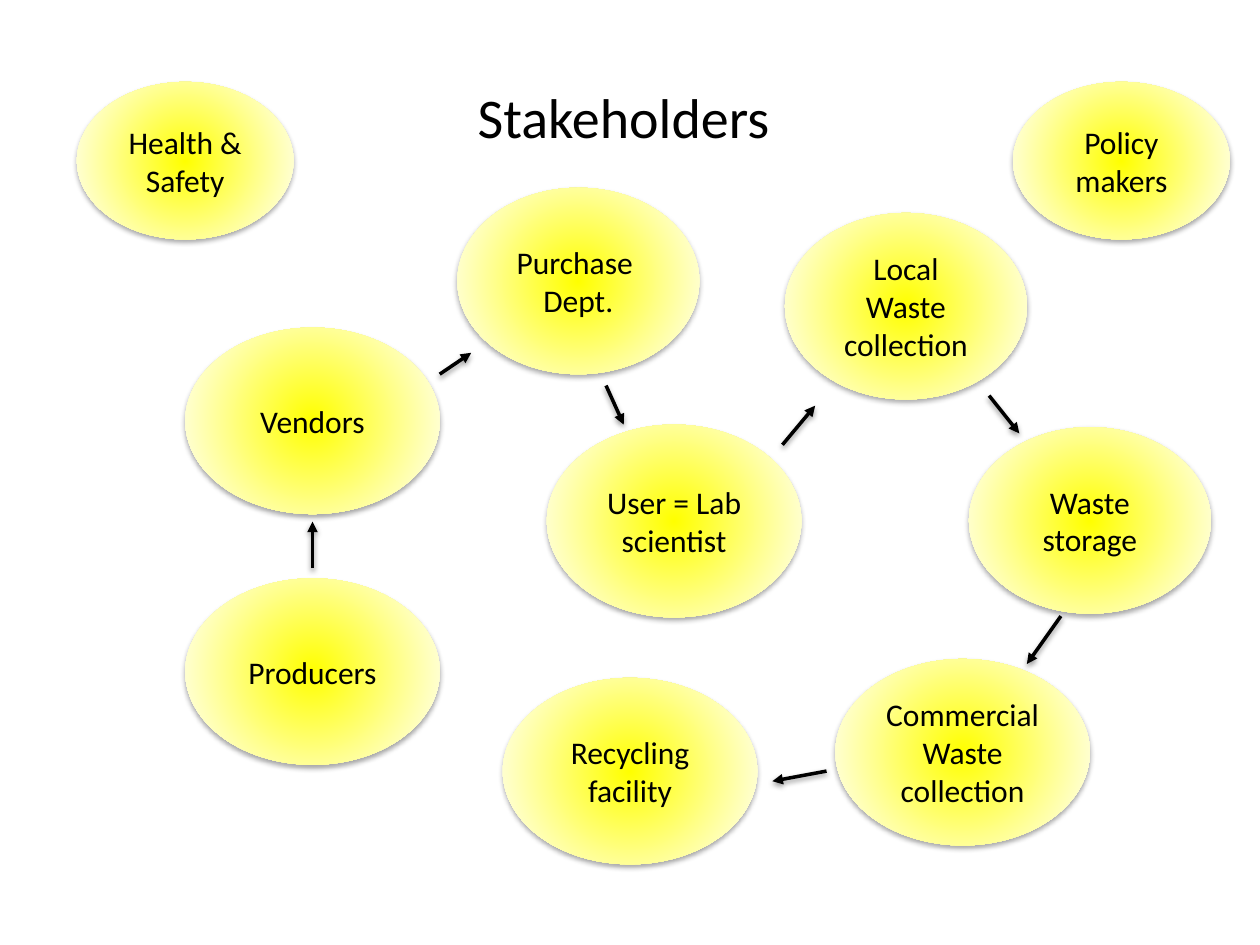
from dataclasses import dataclass

from lxml import etree
from pptx import Presentation
from pptx.dml.color import RGBColor
from pptx.enum.shapes import MSO_CONNECTOR, MSO_SHAPE
from pptx.enum.text import MSO_ANCHOR, PP_ALIGN
from pptx.oxml import parse_xml
from pptx.oxml.ns import nsdecls, qn
from pptx.util import Inches, Pt

ELLIPSE = MSO_SHAPE.OVAL
STRAIGHT = MSO_CONNECTOR.STRAIGHT
CENTER = PP_ALIGN.CENTER
MIDDLE = MSO_ANCHOR.MIDDLE

BLACK = RGBColor(0x00, 0x00, 0x00)
YELLOW = RGBColor(0xFF, 0xFF, 0x00)
WHITE = RGBColor(0xFF, 0xFF, 0xFF)
FONT = "Calibri"

SLIDE_WIDTH, SLIDE_HEIGHT = Inches(10), Inches(7.5)
COLUMN = SLIDE_WIDTH / 100
ROW = SLIDE_HEIGHT / 75

# Ellipse sizes in columns and rows
USER_SIZE = (20.2, 15.3)
WIDE = (20.2, 14.8)
MEDIUM = (19.2, 14.8)
SMALL = (17.2, 12.5)


@dataclass(frozen=True)
class Stakeholder:
    label: str
    column: float
    row: float
    size: tuple[float, float]


@dataclass(frozen=True)
class Arrow:
    start: tuple[float, float]
    end: tuple[float, float]


STAKEHOLDERS = [
    Stakeholder("User = Lab scientist", 43.4, 33.7, USER_SIZE),
    Stakeholder("Local\nWaste collection", 62.3, 16.9, MEDIUM),
    Stakeholder("Waste storage", 76.9, 33.9, MEDIUM),
    Stakeholder("Commercial \nWaste collection", 66.3, 52.3, WIDE),
    Stakeholder("Recycling facility", 39.9, 53.8, WIDE),
    Stakeholder("Purchase \nDept.", 36.3, 14.9, MEDIUM),
    Stakeholder("Vendors", 14.7, 26, WIDE),
    Stakeholder("Producers", 14.7, 45.9, WIDE),
    Stakeholder("Policy makers", 80.4, 6.5, SMALL),
    Stakeholder("Health &\nSafety", 6.1, 6.5, SMALL),
]

ARROWS = [
    Arrow((34.9, 29.7), (37.4, 28)),
    Arrow((48.1, 30.6), (49.5, 33.7)),
    Arrow((62.1, 35.3), (64.7, 32.2)),
    Arrow((78.5, 31.4), (80.9, 34.4)),
    Arrow((84.2, 48.9), (81.5, 52.7)),
    Arrow((65.6, 61.2), (61.3, 62)),
    Arrow((24.8, 45.1), (24.8, 41.4)),
]


def grid_point(column: float, row: float) -> tuple[int, int]:
    return round(column * COLUMN), round(row * ROW)


def write_text(frame, text: str, *, size: float, color: RGBColor = BLACK) -> None:
    frame.text = text
    frame.word_wrap = True
    frame.vertical_anchor = MIDDLE
    for paragraph in frame.paragraphs:
        paragraph.alignment = CENTER
        paragraph.font.size = Pt(size)
        paragraph.font.name = FONT
        paragraph.font.color.rgb = color


def add_shadow(properties, *, opacity: int, distance: float) -> None:
    """Drop a soft black shadow straight down."""
    for effects in properties.findall(qn("a:effectLst")):
        properties.remove(effects)
    properties.append(parse_xml(
        f'<a:effectLst {nsdecls("a")}><a:outerShdw blurRad="{Pt(3.1)}" '
        f'dist="{Pt(distance)}" dir="5400000" rotWithShape="0">'
        f'<a:srgbClr val="{BLACK}"><a:alpha val="{opacity * 1000}"/></a:srgbClr>'
        f'</a:outerShdw></a:effectLst>'))


def fill_radially(shape, inner: RGBColor, outer: RGBColor) -> None:
    gradient = parse_xml(
        f'<a:gradFill {nsdecls("a")} rotWithShape="1"><a:gsLst>'
        f'<a:gs pos="0"><a:srgbClr val="{inner}"/></a:gs>'
        f'<a:gs pos="100000"><a:srgbClr val="{outer}"/></a:gs></a:gsLst>'
        f'<a:path path="circle"><a:fillToRect l="50000" t="50000" r="50000" b="50000"/>'
        f'</a:path></a:gradFill>')
    shape._element.spPr.find(qn("a:prstGeom")).addnext(gradient)


def draw_stakeholder(slide, stakeholder: Stakeholder) -> None:
    shape = slide.shapes.add_shape(
        ELLIPSE, *grid_point(stakeholder.column, stakeholder.row),
        *grid_point(*stakeholder.size))
    fill_radially(shape, YELLOW, WHITE)
    shape.line.fill.background()
    add_shadow(shape._element.spPr, opacity=35, distance=1.8)
    write_text(shape.text_frame, stakeholder.label, size=18)


def draw_arrow(slide, arrow: Arrow) -> None:
    connector = slide.shapes.add_connector(
        STRAIGHT, *grid_point(*arrow.start), *grid_point(*arrow.end))
    connector.line.color.rgb = BLACK
    connector.line.width = Pt(2)
    etree.SubElement(connector.line._get_or_add_ln(), qn("a:tailEnd"), type="triangle")
    add_shadow(connector._element.spPr, opacity=38, distance=1.6)


def main() -> None:
    presentation = Presentation()
    presentation.slide_width, presentation.slide_height = SLIDE_WIDTH, SLIDE_HEIGHT
    title_only = presentation.slide_layouts.get_by_name("Title Only")
    slide = presentation.slides.add_slide(title_only)

    title = slide.shapes.title
    title.left, title.top = grid_point(5, 3)
    title.width, title.height = grid_point(90, 12.5)
    write_text(title.text_frame, "Stakeholders ", size=32)

    for stakeholder in STAKEHOLDERS:
        draw_stakeholder(slide, stakeholder)
    for arrow in ARROWS:
        draw_arrow(slide, arrow)

    presentation.save("out.pptx")


if __name__ == "__main__":
    main()
